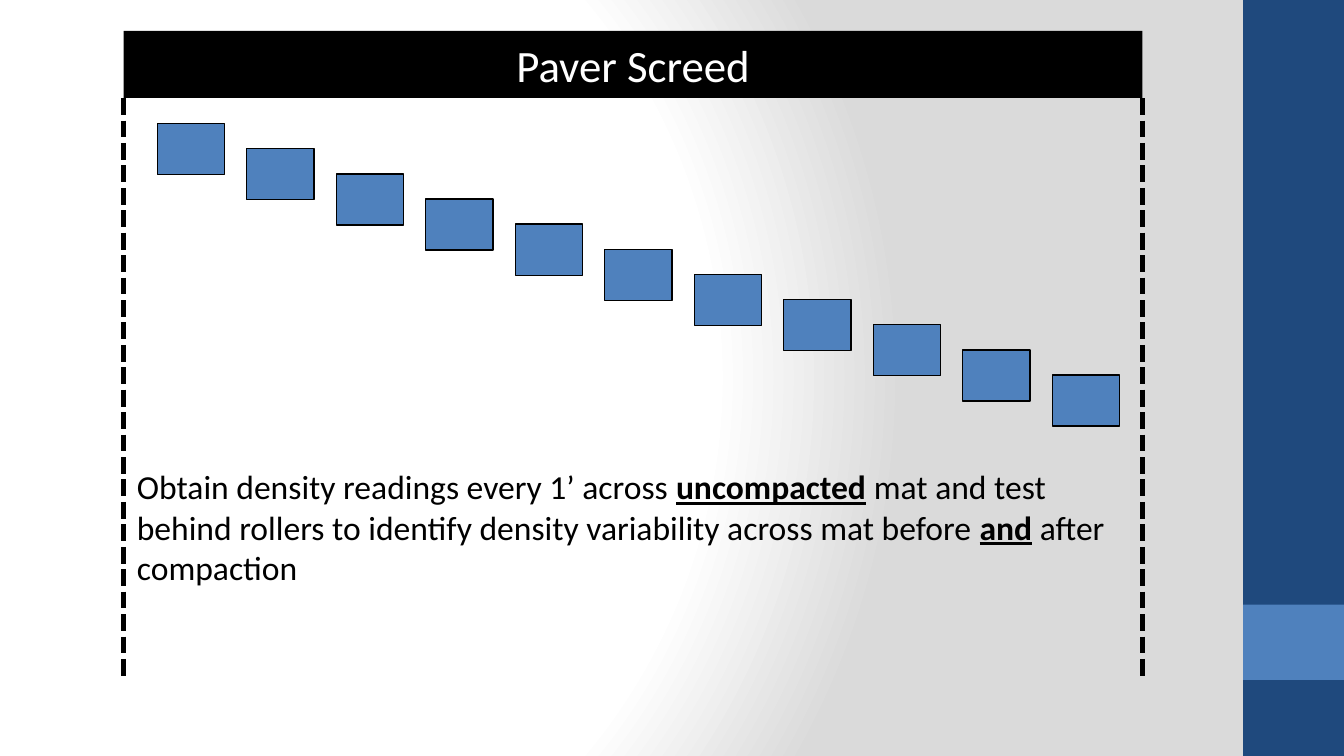
from lxml.etree import SubElement as Sub
from pptx import Presentation
from pptx.dml.color import RGBColor as Rgb
from pptx.enum.dml import MSO_LINE as Dash
from pptx.enum.shapes import MSO_CONNECTOR as Conn, MSO_SHAPE as Kind
from pptx.enum.text import MSO_AUTO_SIZE as Auto, MSO_ANCHOR as Anchor, PP_ALIGN as Align
from pptx.oxml import parse_xml
from pptx.oxml.ns import nsdecls, qn
from pptx.util import Inches, Pt

BLACK = Rgb(0x00, 0x00, 0x00)
WHITE = Rgb(0xFF, 0xFF, 0xFF)
GREY = Rgb(0xDA, 0xDA, 0xDA)
NAVY = Rgb(0x1F, 0x49, 0x7D)
BLUE = Rgb(0x4F, 0x81, 0xBD)

WIDE = 10
HIGH = WIDE * 9 / 16
LEFT, RIGHT = 0.92, 8.5
TOP, BASE, END = 0.23, 0.73, 5.04
COUNT = 11

TITLE = {"size": Pt(24), "name": "Calibri"}
BODY = {"size": Pt(18), "name": "Calibri"}
STRONG = {"bold": True, "underline": True}
FRAME = {"word_wrap": True, "auto_size": Auto.SHAPE_TO_FIT_TEXT,
         "vertical_anchor": Anchor.TOP}
NOTE = [
    ("Obtain density readings every 1’ across ", {}),
    ("uncompacted", STRONG),
    (" mat and test behind rollers to identify density variability across mat before ", {}),
    ("and", STRONG),
    (" after compaction", {}),
]


def style(item, form):
    for name, value in form.items():
        setattr(item, name, value)


def paint(slide):
    slide.background.fill.solid()
    old = slide.element.find(".//" + qn("p:bgPr")).find(qn("a:solidFill"))
    stops = "".join(
        f'<a:gs pos="{pos * 1000}"><a:srgbClr val="{tint}"/></a:gs>'
        for pos, tint in ((0, WHITE), (75, WHITE), (100, GREY)))
    grad = parse_xml(
        f'<a:gradFill {nsdecls("a")} rotWithShape="1"><a:gsLst>{stops}</a:gsLst>'
        '<a:path path="circle"><a:fillToRect l="20000" t="50000" r="100000" b="50000"/>'
        '</a:path></a:gradFill>')
    old.getparent().replace(old, grad)


def box(slide, place, tint, edge=None):
    shape = slide.shapes.add_shape(Kind.RECTANGLE, *map(Inches, place))
    shape.shadow.inherit = False
    shape.fill.solid()
    shape.fill.fore_color.rgb = tint
    if edge is None:
        shape.line.fill.background()
    else:
        shape.line.color.rgb = edge
        shape.line.width = Pt(0.75)
    return shape


def write(shape, runs, form, tint, align):
    frame = shape.text_frame
    style(frame, FRAME)
    para = frame.paragraphs[0]
    para.alignment = align
    for text, extra in runs:
        run = para.add_run()
        run.text = text
        style(run.font, {**form, **extra})
        run.font.color.rgb = tint


def side(slide, x):
    line = slide.shapes.add_connector(
        Conn.STRAIGHT, Inches(x), Inches(BASE), Inches(x), Inches(END))
    line.line.color.rgb = BLACK
    style(line.line, {"width": Pt(3), "dash_style": Dash.SQUARE_DOT})
    Sub(line.element.spPr, qn("a:effectLst"))


def main():
    deck = Presentation()
    style(deck, {"slide_width": Inches(WIDE), "slide_height": Inches(HIGH)})
    slide = deck.slides.add_slide(deck.slide_layouts[6])
    paint(slide)

    box(slide, (9.25, 0, 0.75, HIGH), NAVY)
    box(slide, (9.25, 4.5, 0.75, 0.56), BLUE)

    screed = box(slide, (LEFT, TOP, RIGHT - LEFT, BASE - TOP), BLACK)
    write(screed, [("Paver Screed", {})], TITLE, WHITE, Align.CENTER)
    for x in (LEFT, RIGHT):
        side(slide, x)

    step, drop = 6.66 / (COUNT - 1), 1.87 / (COUNT - 1)
    for i in range(COUNT):
        box(slide, (1.17 + i * step, 0.92 + i * drop, 0.5, 0.38), BLUE, BLACK)

    note = slide.shapes.add_textbox(
        *map(Inches, (LEFT, 3.42, RIGHT - LEFT, 1.01)))
    write(note, NOTE, BODY, BLACK, Align.LEFT)
    deck.save("out.pptx")


if __name__ == "__main__":
    main()
